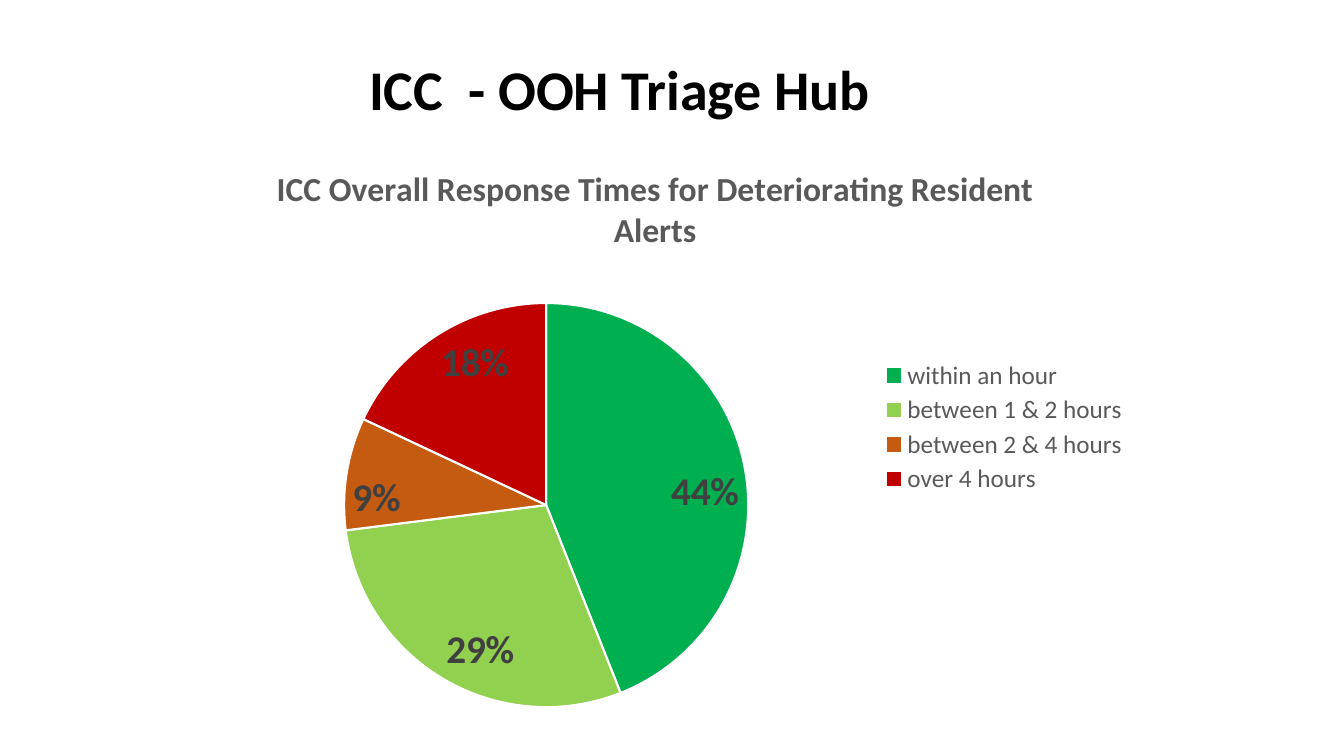
from dataclasses import dataclass

from lxml.etree import SubElement
from pptx import Presentation
from pptx.chart.data import CategoryChartData
from pptx.dml.color import RGBColor
from pptx.enum.chart import XL_CHART_TYPE as ChartType
from pptx.enum.chart import XL_LABEL_POSITION as LabelPosition
from pptx.enum.chart import XL_LEGEND_POSITION as LegendPosition
from pptx.enum.text import MSO_ANCHOR, PP_ALIGN
from pptx.oxml.ns import qn
from pptx.text.text import Font
from pptx.util import Emu, Pt

PX_PER_INCH = 100.8
FONT = "Calibri"
COLORS = {
    "heading": "000000",
    "caption": "595959",
    "label": "404040",
    "border": "FFFFFF",
    "green": "00B050",
    "lime": "92D050",
    "orange": "C55A11",
    "red": "C00000",
}


@dataclass(frozen=True)
class Box:
    left: int
    top: int
    width: int
    height: int

    def emu(self) -> tuple[Emu, Emu, Emu, Emu]:
        return (px(self.left), px(self.top), px(self.width), px(self.height))


@dataclass(frozen=True)
class Response:
    period: str
    share: float
    color: str


HEADING_BOX = Box(359, 52, 562, 80)
CHART_BOX = Box(160, 132, 979, 590)
CAPTION_BOX = Box(271, 160, 756, 80)
PIE_BOX = Box(344, 303, 404, 404)
LEGEND_BOX = Box(880, 356, 250, 142)

RESPONSES = [
    Response("within an hour", 0.44, "green"),
    Response("between 1 & 2 hours", 0.29, "lime"),
    Response("between 2 & 4 hours", 0.09, "orange"),
    Response("over 4 hours", 0.18, "red"),
]


def px(length: int) -> Emu:
    return Emu(round(length * 914400 / PX_PER_INCH))


def rgb(name: str) -> RGBColor:
    return RGBColor.from_string(COLORS[name])


def style_font(font: Font, size: int, color: str, bold: bool = False) -> None:
    font.name = FONT
    font.size = Pt(size)
    font.bold = bold
    font.color.rgb = rgb(color)


def place_in_chart(part, box: Box, sized: bool = True, inner: bool = False) -> None:
    """Give a chart part a manual layout from its place on the slide."""
    layout = part.find(qn("c:layout"))
    if layout is None:
        layout = SubElement(part, qn("c:layout"))
        before = [qn(tag) for tag in ("c:tx", "c:legendPos", "c:legendEntry")]
        part.insert(sum(child.tag in before for child in part), layout)
    manual = SubElement(layout, qn("c:manualLayout"))
    settings = {"layoutTarget": "inner"} if inner else {}
    settings |= {"xMode": "edge", "yMode": "edge"}
    settings["x"] = f"{(box.left - CHART_BOX.left) / CHART_BOX.width:.3f}"
    settings["y"] = f"{(box.top - CHART_BOX.top) / CHART_BOX.height:.3f}"
    if sized:
        settings["w"] = f"{box.width / CHART_BOX.width:.3f}"
        settings["h"] = f"{box.height / CHART_BOX.height:.3f}"
    for tag, value in settings.items():
        SubElement(manual, qn(f"c:{tag}")).set("val", value)


def add_heading(slide) -> None:
    heading = slide.shapes.title
    heading.left, heading.top, heading.width, heading.height = HEADING_BOX.emu()
    heading.text_frame.vertical_anchor = MSO_ANCHOR.MIDDLE
    heading.text_frame.word_wrap = True
    paragraph = heading.text_frame.paragraphs[0]
    paragraph.alignment = PP_ALIGN.LEFT
    paragraph.line_spacing = 0.9
    paragraph.space_after = Pt(6)
    run = paragraph.add_run()
    run.text = "ICC  - OOH Triage Hub"
    style_font(run.font, 40, "heading", bold=True)


def add_response_pie(slide) -> None:
    data = CategoryChartData(number_format="0%")
    data.categories = [response.period for response in RESPONSES]
    data.add_series("Series 1", [response.share for response in RESPONSES])
    chart = slide.shapes.add_chart(ChartType.PIE, *CHART_BOX.emu(), data).chart
    style_font(chart.font, 12, "heading")

    caption = chart.chart_title.text_frame.paragraphs[0].add_run()
    caption.text = "ICC Overall Response Times for Deteriorating Resident Alerts"
    style_font(caption.font, 24, "caption", bold=True)
    chart.chart_title.include_in_layout = False

    chart.has_legend = True
    chart.legend.position = LegendPosition.RIGHT
    chart.legend.include_in_layout = False
    style_font(chart.legend.font, 18, "caption")

    pie = chart.plots[0]
    pie.vary_by_categories = True
    for index, response in enumerate(RESPONSES):
        piece = pie.series[0].points[index].format
        piece.fill.solid()
        piece.fill.fore_color.rgb = rgb(response.color)
        piece.line.color.rgb = rgb("border")
        piece.line.width = Pt(1.5)

    labels = pie.series[0].data_labels
    labels.show_value = True
    labels.show_percentage = False
    labels.number_format = "0%"
    labels.number_format_is_linked = False
    labels.position = LabelPosition.INSIDE_END
    style_font(labels.font, 28, "label", bold=True)

    chart_xml = chart.element.find(qn("c:chart"))
    place_in_chart(chart_xml.find(qn("c:title")), CAPTION_BOX, sized=False)
    place_in_chart(chart_xml.find(qn("c:plotArea")), PIE_BOX, inner=True)
    place_in_chart(chart_xml.find(qn("c:legend")), LEGEND_BOX)


def main() -> None:
    deck = Presentation()
    deck.slide_width, deck.slide_height = px(1344), px(756)
    slide = deck.slides.add_slide(deck.slide_layouts.get_by_name("Title Only"))
    add_heading(slide)
    add_response_pie(slide)
    deck.save("out.pptx")


if __name__ == "__main__":
    main()
